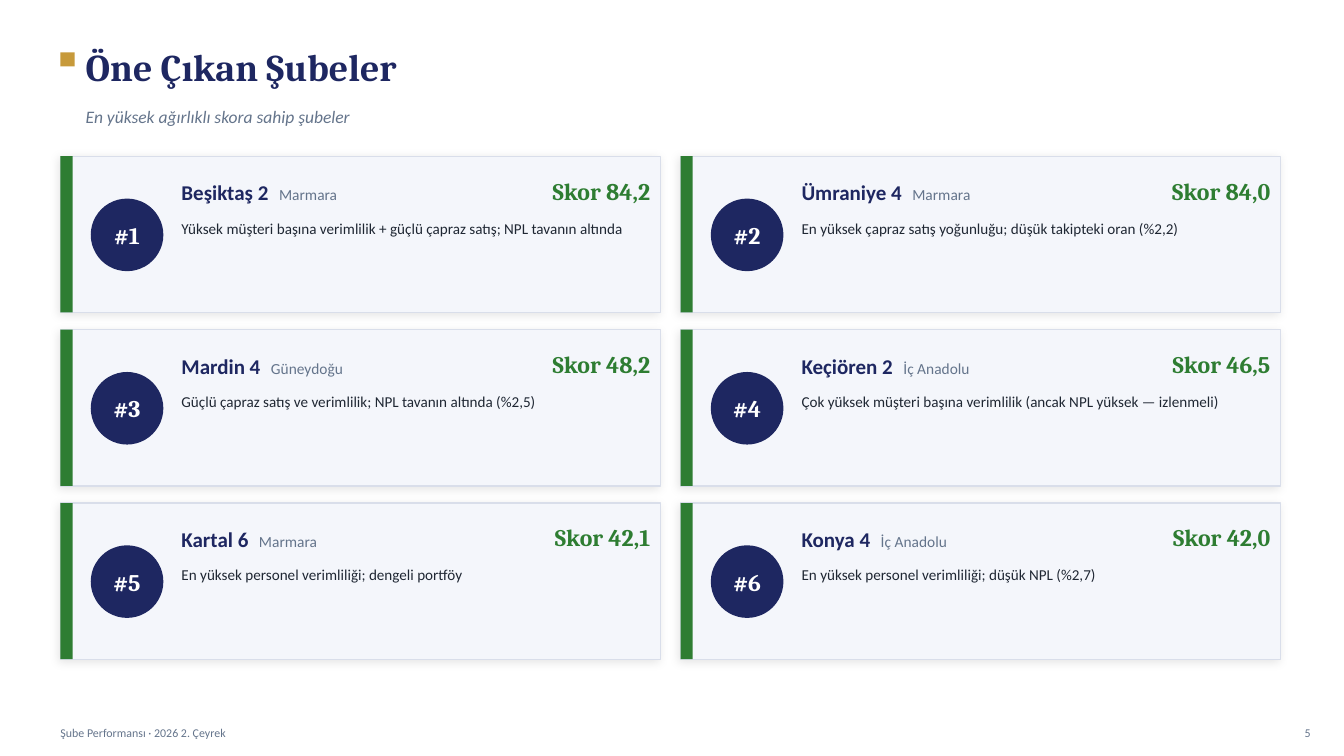
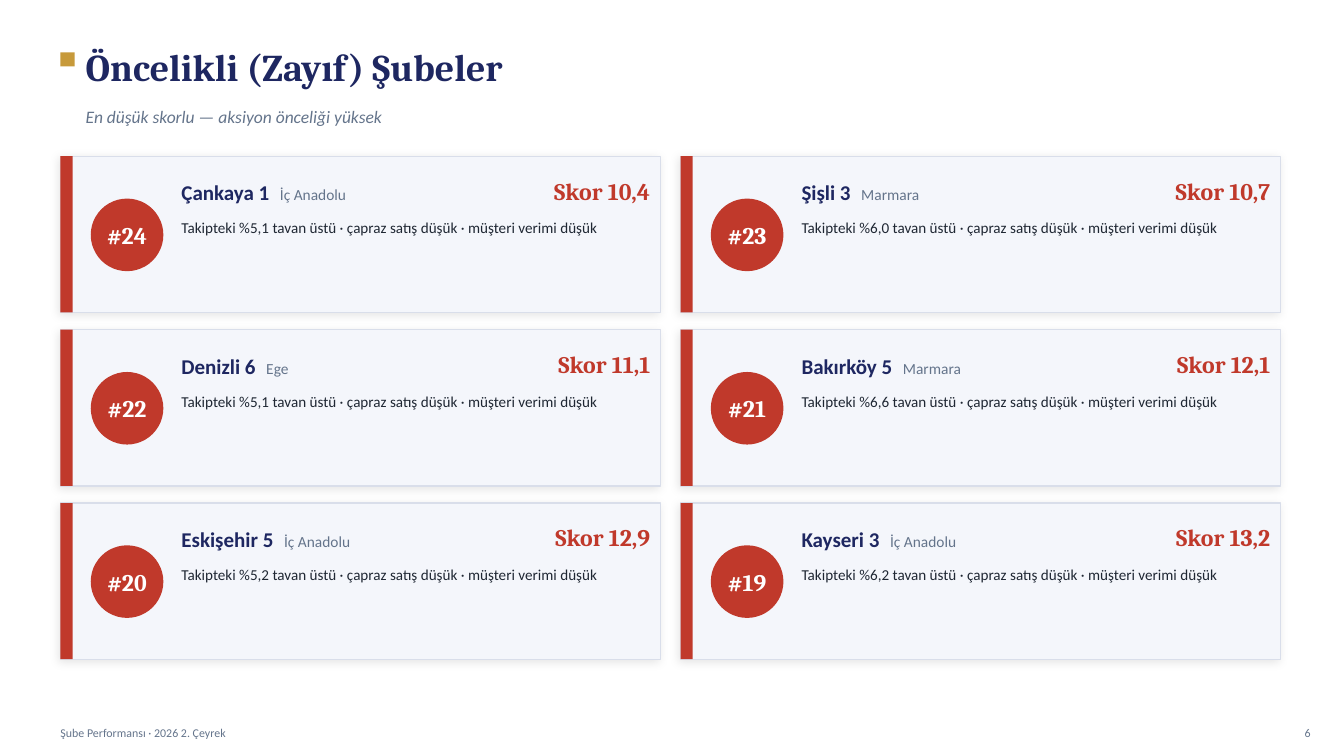
from dataclasses import dataclass

from lxml.etree import SubElement
from pptx import Presentation
from pptx.dml.color import RGBColor
from pptx.enum.shapes import MSO_SHAPE
from pptx.enum.text import MSO_ANCHOR, MSO_AUTO_SIZE, PP_ALIGN
from pptx.oxml.ns import qn
from pptx.util import Inches, Pt


@dataclass(frozen=True)
class Theme:
    navy: str = "1E2761"
    gold: str = "C79A3B"
    slate: str = "64748B"
    ink: str = "1F2733"
    white: str = "FFFFFF"
    card: str = "F4F6FB"
    border: str = "D9DEEA"
    green: str = "2E7D32"
    red: str = "C0392B"
    shadow: str = "000000"
    heading_font: str = "Cambria"
    body_font: str = "Calibri"
    title_size: float = 27
    subtitle_size: float = 12.5
    score_size: float = 17
    branch_size: float = 15
    region_size: float = 11
    reason_size: float = 10.8
    footer_size: float = 8.5


THEME = Theme()
FOOTER = "Şube Performansı · 2026 2. Çeyrek"
MARGIN = 0.6
GRID_TOP = 1.55
CARD_WIDTH, CARD_HEIGHT = 5.95, 1.55
COLUMN_GAP, ROW_GAP = 0.2, 0.17
COLUMNS = 2
BADGE_SIZE = 0.72

BEST_BRANCHES = [
    ("#1", "Beşiktaş 2", "Marmara", "84,2",
     "Yüksek müşteri başına verimlilik + güçlü çapraz satış; NPL tavanın altında"),
    ("#2", "Ümraniye 4", "Marmara", "84,0",
     "En yüksek çapraz satış yoğunluğu; düşük takipteki oran (%2,2)"),
    ("#3", "Mardin 4", "Güneydoğu", "48,2",
     "Güçlü çapraz satış ve verimlilik; NPL tavanın altında (%2,5)"),
    ("#4", "Keçiören 2", "İç Anadolu", "46,5",
     "Çok yüksek müşteri başına verimlilik (ancak NPL yüksek — izlenmeli)"),
    ("#5", "Kartal 6", "Marmara", "42,1",
     "En yüksek personel verimliliği; dengeli portföy"),
    ("#6", "Konya 4", "İç Anadolu", "42,0",
     "En yüksek personel verimliliği; düşük NPL (%2,7)"),
]
WEAK_REASON = "Takipteki {} tavan üstü · çapraz satış düşük · müşteri verimi düşük"
WEAK_BRANCHES = [
    (rank, branch, region, score, WEAK_REASON.format(overdue))
    for rank, branch, region, score, overdue in [
        ("#24", "Çankaya 1", "İç Anadolu", "10,4", "%5,1"),
        ("#23", "Şişli 3", "Marmara", "10,7", "%6,0"),
        ("#22", "Denizli 6", "Ege", "11,1", "%5,1"),
        ("#21", "Bakırköy 5", "Marmara", "12,1", "%6,6"),
        ("#20", "Eskişehir 5", "İç Anadolu", "12,9", "%5,2"),
        ("#19", "Kayseri 3", "İç Anadolu", "13,2", "%6,2"),
    ]
]


def add_span(para, text, *, size, color, font=THEME.body_font, bold=False,
             italic=False, tracking=0):
    """Append a run; tracking is extra letter spacing in points."""
    span = para.add_run()
    span.text = text
    span.font.name = font
    span.font.size = Pt(size)
    span.font.bold = bold
    span.font.italic = italic
    span.font.color.rgb = RGBColor.from_string(color)
    if tracking:
        span.font._element.set("spc", str(tracking * 100))


def write(shape, text, *, align=PP_ALIGN.LEFT, anchor=MSO_ANCHOR.MIDDLE,
          wrap=True, line_spacing=None, **span_format):
    """Set a shape's text without insets and return its paragraph."""
    frame = shape.text_frame
    frame.margin_left = frame.margin_top = 0
    frame.margin_right = frame.margin_bottom = 0
    frame.auto_size = MSO_AUTO_SIZE.NONE
    frame.word_wrap = wrap
    frame.vertical_anchor = anchor
    para = frame.paragraphs[0]
    para.alignment = align
    if line_spacing:
        para.line_spacing = line_spacing
    add_span(para, text, **span_format)
    return para


def add_text(page, left, top, width, height, text, **text_format):
    box = page.shapes.add_textbox(
        Inches(left), Inches(top), Inches(width), Inches(height))
    return write(box, text, **text_format)


def add_block(page, kind, left, top, width, height, fill, border=None):
    block = page.shapes.add_shape(
        kind, Inches(left), Inches(top), Inches(width), Inches(height))
    block.shadow.inherit = False
    block.fill.solid()
    block.fill.fore_color.rgb = RGBColor.from_string(fill)
    if border:
        block.line.color.rgb = RGBColor.from_string(border)
        block.line.width = Pt(1)
    else:
        block.line.fill.background()
    return block


def add_soft_shadow(shape):
    effects = shape._element.spPr.find(qn("a:effectLst"))
    shadow = SubElement(
        effects, qn("a:outerShdw"), blurRad=str(Pt(7)), dist=str(Pt(2)),
        dir=str(135 * 60000), algn="bl", rotWithShape="0")
    color = SubElement(shadow, qn("a:srgbClr"), val=THEME.shadow)
    SubElement(color, qn("a:alpha"), val="10000")


def add_header(page, title, subtitle):
    text_left, text_width = MARGIN + 0.25, 11.6
    add_block(page, MSO_SHAPE.RECTANGLE, MARGIN, 0.52, 0.14, 0.14, THEME.gold)
    heading = page.shapes.title
    heading.left, heading.top = Inches(text_left), Inches(0.36)
    heading.width, heading.height = Inches(text_width), Inches(0.6)
    write(heading, title, size=THEME.title_size, color=THEME.navy,
          font=THEME.heading_font, bold=True)
    add_text(page, text_left, 0.98, text_width, 0.35, subtitle,
             size=THEME.subtitle_size, color=THEME.slate, italic=True)


def add_footer(page, number):
    style = dict(size=THEME.footer_size, color=THEME.slate)
    add_text(page, MARGIN, 7.12, 7, 0.3, FOOTER, **style)
    add_text(page, 12.5, 7.12, 0.5, 0.3, str(number),
             align=PP_ALIGN.RIGHT, **style)


def add_card(page, left, top, entry, accent, badge_color, line_spacing):
    rank, branch, region, score, reason = entry
    panel = add_block(page, MSO_SHAPE.RECTANGLE, left, top, CARD_WIDTH,
                      CARD_HEIGHT, THEME.card, THEME.border)
    add_soft_shadow(panel)
    add_block(page, MSO_SHAPE.RECTANGLE, left, top, 0.12, CARD_HEIGHT, accent)

    score_style = dict(size=THEME.score_size, font=THEME.heading_font, bold=True)
    badge = add_block(page, MSO_SHAPE.OVAL, left + 0.3, top + 0.42,
                      BADGE_SIZE, BADGE_SIZE, badge_color)
    write(badge, rank, align=PP_ALIGN.CENTER, wrap=False,
          color=THEME.white, **score_style)

    text_left = left + 1.2
    para = add_text(page, text_left, top + 0.16, 3.4, 0.4, branch,
                    size=THEME.branch_size, color=THEME.navy, bold=True)
    region_style = dict(size=THEME.region_size, color=THEME.slate)
    add_span(para, " ", tracking=5, **region_style)
    add_span(para, region, **region_style)
    add_text(page, left + 4.35, top + 0.14, 1.5, 0.4, f"Skor {score}",
             align=PP_ALIGN.RIGHT, color=accent, **score_style)
    add_text(page, text_left, top + 0.62, 4.6, 0.85, reason,
             anchor=MSO_ANCHOR.TOP, line_spacing=line_spacing,
             size=THEME.reason_size, color=THEME.ink)


def add_ranking_page(deck, number, title, subtitle, entries, *, accent,
                     badge_color, line_spacing=None):
    page = deck.slides.add_slide(deck.slide_layouts.get_by_name("Title Only"))
    add_header(page, title, subtitle)
    for index, entry in enumerate(entries):
        row, column = divmod(index, COLUMNS)
        add_card(page, MARGIN + column * (CARD_WIDTH + COLUMN_GAP),
                 GRID_TOP + row * (CARD_HEIGHT + ROW_GAP),
                 entry, accent, badge_color, line_spacing)
    add_footer(page, number)


def main():
    deck = Presentation()
    deck.slide_width, deck.slide_height = Inches(13.33), Inches(7.5)
    add_ranking_page(
        deck, 5, "Öne Çıkan Şubeler", "En yüksek ağırlıklı skora sahip şubeler",
        BEST_BRANCHES, accent=THEME.green, badge_color=THEME.navy,
        line_spacing=1.02)
    add_ranking_page(
        deck, 6, "Öncelikli (Zayıf) Şubeler",
        "En düşük skorlu — aksiyon önceliği yüksek",
        WEAK_BRANCHES, accent=THEME.red, badge_color=THEME.red)
    deck.save("out.pptx")


if __name__ == "__main__":
    main()
